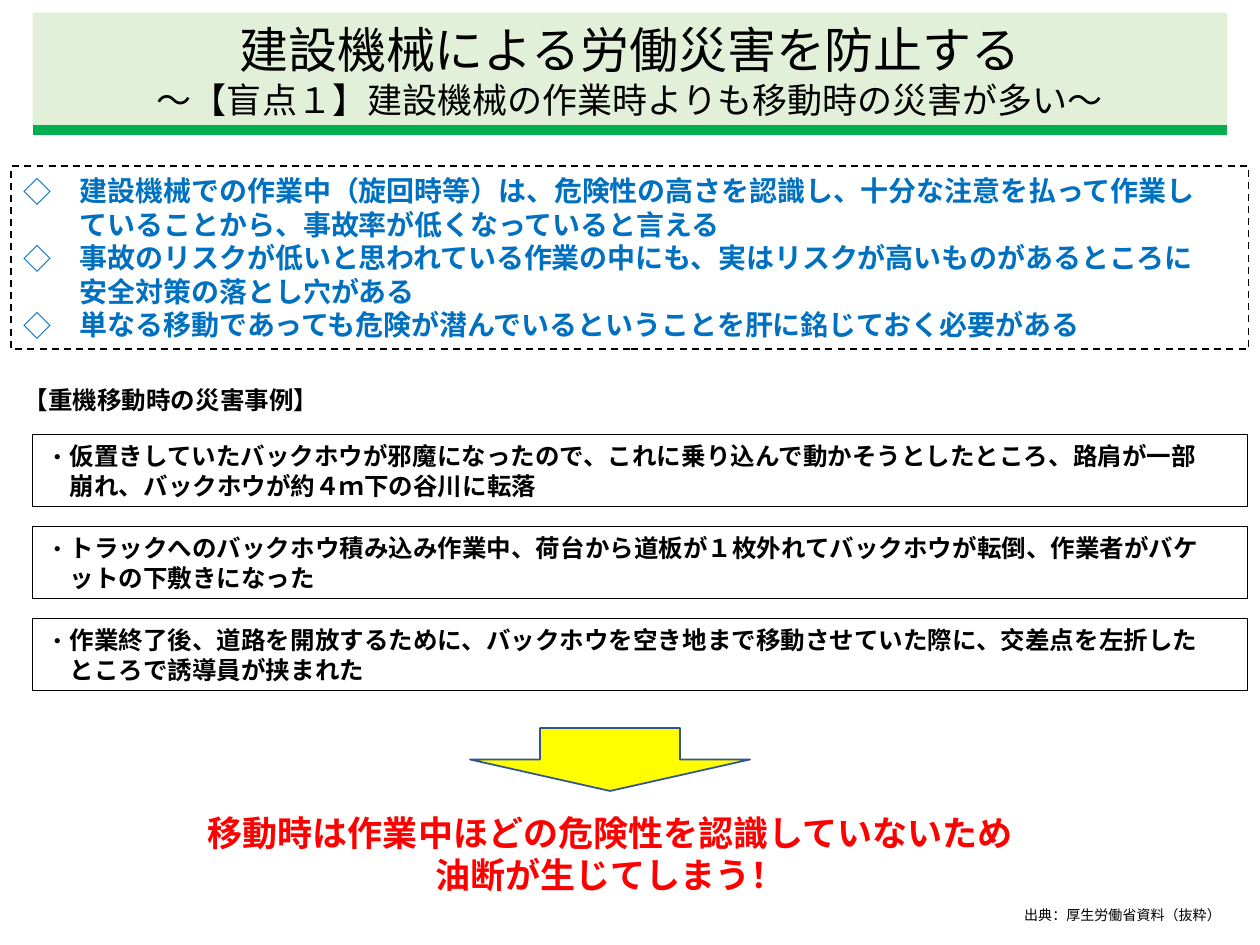
"""Build a slide on accidents that happen while construction machines are being moved."""
from dataclasses import dataclass
from typing import NamedTuple

from lxml import etree
from pptx import Presentation
from pptx.dml.color import RGBColor
from pptx.enum.dml import MSO_LINE
from pptx.enum.shapes import MSO_CONNECTOR, MSO_SHAPE
from pptx.enum.text import MSO_ANCHOR, MSO_AUTO_SIZE, PP_ALIGN
from pptx.oxml.ns import qn
from pptx.util import Pt

LEFT, CENTER = PP_ALIGN.LEFT, PP_ALIGN.CENTER
MIDDLE = MSO_ANCHOR.MIDDLE
NO_AUTOFIT = MSO_AUTO_SIZE.NONE
DASH = MSO_LINE.DASH
RECTANGLE, DOWN_ARROW = MSO_SHAPE.RECTANGLE, MSO_SHAPE.DOWN_ARROW
STRAIGHT = MSO_CONNECTOR.STRAIGHT

FONT = "Noto Sans CJK JP"
LINE_RATIO = 1.2
CASE_TOP, CASE_PITCH = 248.4, 52.6


class Place(NamedTuple):
    left: float
    top: float
    width: float
    height: float


@dataclass(frozen=True)
class TextStyle:
    size: float
    color: str = "000000"
    bold: bool = False
    alignment: PP_ALIGN = LEFT
    bullet: str = ""
    indent: float = 0


TITLE = TextStyle(28, alignment=CENTER)
SUBTITLE = TextStyle(20, alignment=CENTER)
POINT = TextStyle(16, "0070C0", True, bullet="◇", indent=32)
HEADING = TextStyle(14, bold=True)
CASE = TextStyle(14, bold=True, bullet="・", indent=14)
WARNING = TextStyle(20, "FF0000", True, CENTER)
SOURCE = TextStyle(8)

TITLE_LINES = [
    ("建設機械による労働災害を防止する", TITLE),
    ("～【盲点１】建設機械の作業時よりも移動時の災害が多い～", SUBTITLE),
]
POINTS = [
    "建設機械での作業中（旋回時等）は、危険性の高さを認識し、十分な注意を払って作業し\v"
    "ていることから、事故率が低くなっていると言える",
    "事故のリスクが低いと思われている作業の中にも、実はリスクが高いものがあるところに\v"
    "安全対策の落とし穴がある",
    "単なる移動であっても危険が潜んでいるということを肝に銘じておく必要がある",
]
CASES = [
    "仮置きしていたバックホウが邪魔になったので、これに乗り込んで動かそうとしたところ、路肩が一部\v"
    "崩れ、バックホウが約４ｍ下の谷川に転落",
    "トラックへのバックホウ積み込み作業中、荷台から道板が１枚外れてバックホウが転倒、作業者がバケ\v"
    "ットの下敷きになった",
    "作業終了後、道路を開放するために、バックホウを空き地まで移動させていた際に、交差点を左折した\v"
    "ところで誘導員が挟まれた",
]
LABELS = [
    (Place(6.5, 216, 206, 24.5), "【重機移動時の災害事例】", HEADING),
    (Place(108, 460, 481.7, 55.4),
     "移動時は作業中ほどの危険性を認識していないため油断が生じてしまう！", WARNING),
    (Place(578.2, 514, 134.6, 17.3), "出典：厚生労働省資料（抜粋）", SOURCE),
]


def rgb(color: str) -> RGBColor:
    return RGBColor.from_string(color)


def apply(target, formats: dict) -> None:
    for name, value in formats.items():
        setattr(target, name, value)


def points(place: Place) -> list:
    return [Pt(length) for length in place]


def move(shape, place: Place) -> None:
    apply(shape, dict(zip(Place._fields, points(place))))


def paint(shape, fill: str = "", line: str = "", width: float = 1) -> None:
    if fill:
        shape.fill.solid()
        shape.fill.fore_color.rgb = rgb(fill)
    else:
        shape.fill.background()
    if line:
        shape.line.color.rgb = rgb(line)
        shape.line.width = Pt(width)
    else:
        shape.line.fill.background()


def set_bullet(paragraph, style: TextStyle) -> None:
    properties = paragraph._p.get_or_add_pPr()
    properties.set("marL", str(Pt(style.indent)))
    properties.set("indent", str(-Pt(style.indent)))
    etree.SubElement(properties, qn("a:buFont"), typeface=FONT)
    etree.SubElement(properties, qn("a:buChar"), char=style.bullet)


def write(shape, lines: list[tuple[str, TextStyle]]) -> None:
    frame = shape.text_frame
    apply(frame, {"word_wrap": True, "auto_size": NO_AUTOFIT, "vertical_anchor": MIDDLE})
    frame.text = "\n".join(text for text, _ in lines)
    for paragraph, (_, style) in zip(frame.paragraphs, lines):
        apply(paragraph, {"alignment": style.alignment, "space_before": Pt(0),
                          "line_spacing": Pt(style.size * LINE_RATIO)})
        if style.bullet:
            set_bullet(paragraph, style)
        for run in paragraph.runs:
            apply(run.font, {"size": Pt(style.size), "bold": style.bold, "name": FONT})
            run.font.color.rgb = rgb(style.color)
            etree.SubElement(run._r.get_or_add_rPr(), qn("a:ea"), typeface=FONT)


def add_block(slide, kind: MSO_SHAPE, place: Place):
    block = slide.shapes.add_shape(kind, *points(place))
    block.shadow.inherit = False
    return block


def main() -> None:
    deck = Presentation()
    apply(deck, {"slide_width": Pt(720), "slide_height": Pt(540)})
    slide = deck.slides.add_slide(deck.slide_layouts[1])

    title = slide.shapes.title
    move(title, Place(18.7, 7.2, 682.6, 65.5))
    paint(title, "E2F0D9")
    write(title, TITLE_LINES)

    rule = slide.shapes.add_connector(STRAIGHT, Pt(18.7), Pt(74.2), Pt(701.3), Pt(74.2))
    rule.line.color.rgb = rgb("00B050")
    rule.line.width = Pt(5.5)
    etree.SubElement(rule._element.spPr, qn("a:effectLst"))

    summary = slide.placeholders[1]
    move(summary, Place(6.5, 95, 707, 104.4))
    paint(summary, line="000000")
    summary.line.dash_style = DASH
    write(summary, [(point, POINT) for point in POINTS])

    for index, case in enumerate(CASES):
        place = Place(18.7, CASE_TOP + index * CASE_PITCH, 694.1, 41)
        case_box = add_block(slide, RECTANGLE, place)
        paint(case_box, line="000000", width=0.75)
        write(case_box, [(case, CASE)])

    arrow = add_block(slide, DOWN_ARROW, Place(268.6, 416, 160, 36))
    paint(arrow, "FFFF00", "325491")

    for place, text, style in LABELS:
        write(slide.shapes.add_textbox(*points(place)), [(text, style)])

    deck.save("out.pptx")


if __name__ == "__main__":
    main()
